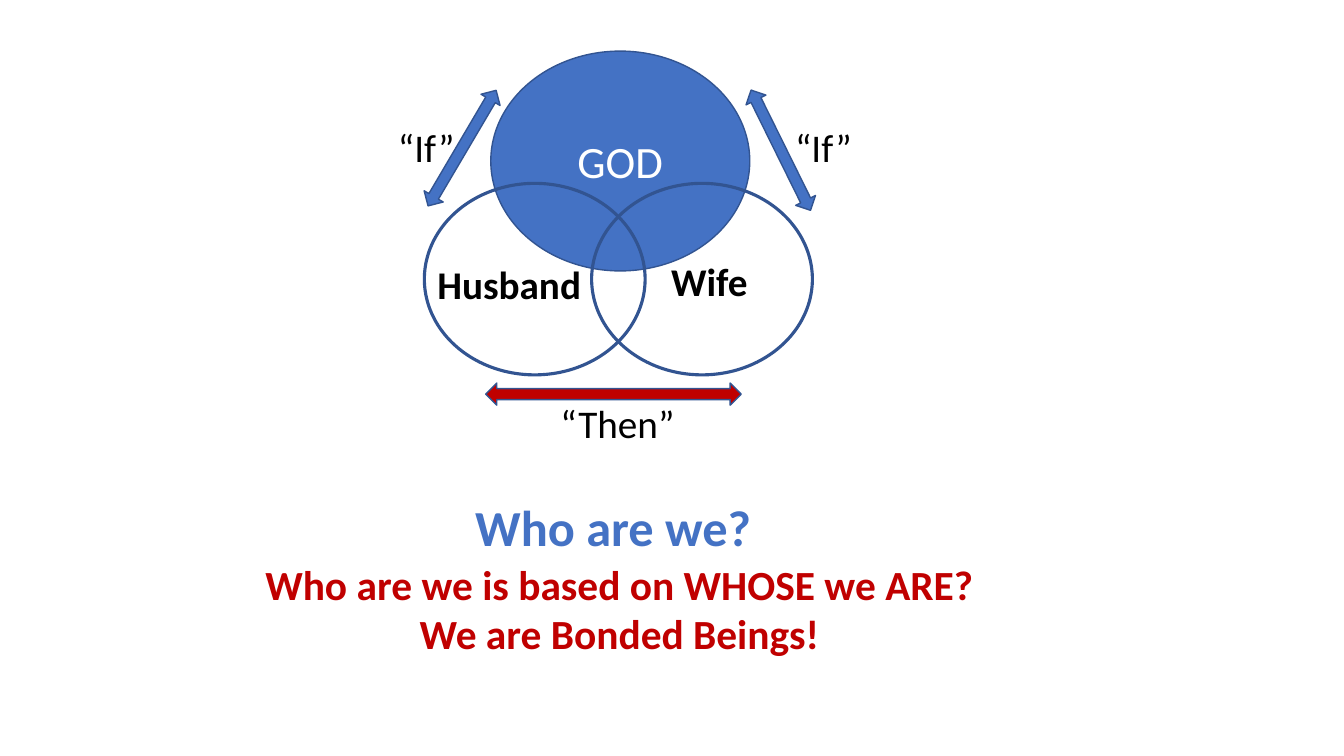
from pptx import Presentation
from pptx.dml.color import RGBColor
from pptx.enum.shapes import MSO_SHAPE
from pptx.enum.text import MSO_ANCHOR, MSO_AUTO_SIZE, PP_ALIGN
from pptx.util import Pt

ELLIPSE, ARROW = MSO_SHAPE.OVAL, MSO_SHAPE.LEFT_RIGHT_ARROW
TOP, MIDDLE, BOTTOM = MSO_ANCHOR.TOP, MSO_ANCHOR.MIDDLE, MSO_ANCHOR.BOTTOM
LEFT, CENTER = PP_ALIGN.LEFT, PP_ALIGN.CENTER
NO_FIT, GROW = MSO_AUTO_SIZE.NONE, MSO_AUTO_SIZE.SHAPE_TO_FIT_TEXT

BLUE = RGBColor(0x44, 0x72, 0xC4)
NAVY = RGBColor(0x32, 0x54, 0x91)
RED = RGBColor(0xC0, 0x00, 0x00)
BLACK = RGBColor(0x00, 0x00, 0x00)
WHITE = RGBColor(0xFF, 0xFF, 0xFF)
FONT = "Calibri"


def set_all(target, values):
    """Set every attribute in values on target."""
    for name, value in values.items():
        setattr(target, name, value)


def write(s, lines, size, color, bold=False, para=None, frame=None):
    """Fill a shape with one formatted paragraph per line."""
    tf = s.text_frame
    set_all(tf, frame or {})
    for i, line in enumerate(lines):
        p = tf.add_paragraph() if i else tf.paragraphs[0]
        set_all(p, para or {})
        r = p.add_run()
        r.text = line
        set_all(r.font, {"name": FONT, "size": Pt(size), "bold": bold})
        r.font.color.rgb = color


def place(s, box):
    """Move and size a shape by a box in points."""
    set_all(s, dict(zip(("left", "top", "width", "height"), map(Pt, box))))


def add_figure(shapes, kind, box, fill=None, weight=1, rotation=0):
    """Add an outlined preset shape, hollow without a fill."""
    s = shapes.add_shape(kind, *map(Pt, box))
    s.shadow.inherit = False
    s.rotation = rotation
    if fill is None:
        s.fill.background()
    else:
        s.fill.solid()
        s.fill.fore_color.rgb = fill
    s.line.color.rgb = NAVY
    s.line.width = Pt(weight)
    return s


def add_label(shapes, text, x, y, width, bold=False):
    """Add a one-line label that fits its text."""
    s = shapes.add_textbox(Pt(x), Pt(y), Pt(width), Pt(41.2))
    write(s, [text], 28, BLACK, bold, {"alignment": LEFT},
          {"word_wrap": False, "auto_size": GROW})


def add_diagram(shapes):
    """Draw the three circles with their arrows and labels."""
    god = add_figure(shapes, ELLIPSE, (350.6, 36.5, 185, 157), BLUE)
    write(god, ["GOD"], 32, WHITE, para={"alignment": CENTER},
          frame={"vertical_anchor": MIDDLE})
    for x in (422.6, 303.1):
        add_figure(shapes, ELLIPSE, (x, 131, 157.7, 136.8), weight=2.25)
    for x, y, width, color, rotation in (
        (282.2, 97.9, 95.8, BLUE, 300.5),
        (509.8, 99.4, 95.8, BLUE, 63.7),
        (347, 273.6, 182.5, RED, 0),
    ):
        add_figure(shapes, ARROW, (x, y, width, 15.8), color, rotation=rotation)
    add_label(shapes, "Husband", 305.3, 182.3, 118, bold=True)
    add_label(shapes, "Wife", 472.3, 180, 70, bold=True)
    add_label(shapes, "“Then”", 393.1, 281.5, 97.2)
    for x in (277.2, 560.9):
        add_label(shapes, "“If”", x, 84.2, 55.4)


def main():
    """Build and save the slide."""
    prs = Presentation()
    set_all(prs, {"slide_width": Pt(960), "slide_height": Pt(540)})
    slide = prs.slides.add_slide(prs.slide_layouts[0])
    title, subtitle = slide.placeholders
    place(title, (139, 350, 598, 52))
    write(title, ["Who are we?"], 36, BLUE, True,
          {"alignment": CENTER, "line_spacing": 0.9},
          {"vertical_anchor": BOTTOM, "auto_size": NO_FIT, "word_wrap": True})
    place(subtitle, (82.8, 405.4, 720, 130.3))
    write(subtitle, ["Who are we is based on WHOSE we ARE?", "We are Bonded Beings!"],
          29.6, RED, True,
          {"alignment": CENTER, "line_spacing": 0.7, "space_before": Pt(10)},
          {"vertical_anchor": TOP, "auto_size": NO_FIT, "word_wrap": True})
    add_diagram(slide.shapes.add_group_shape().shapes)
    prs.save("out.pptx")


if __name__ == "__main__":
    main()
